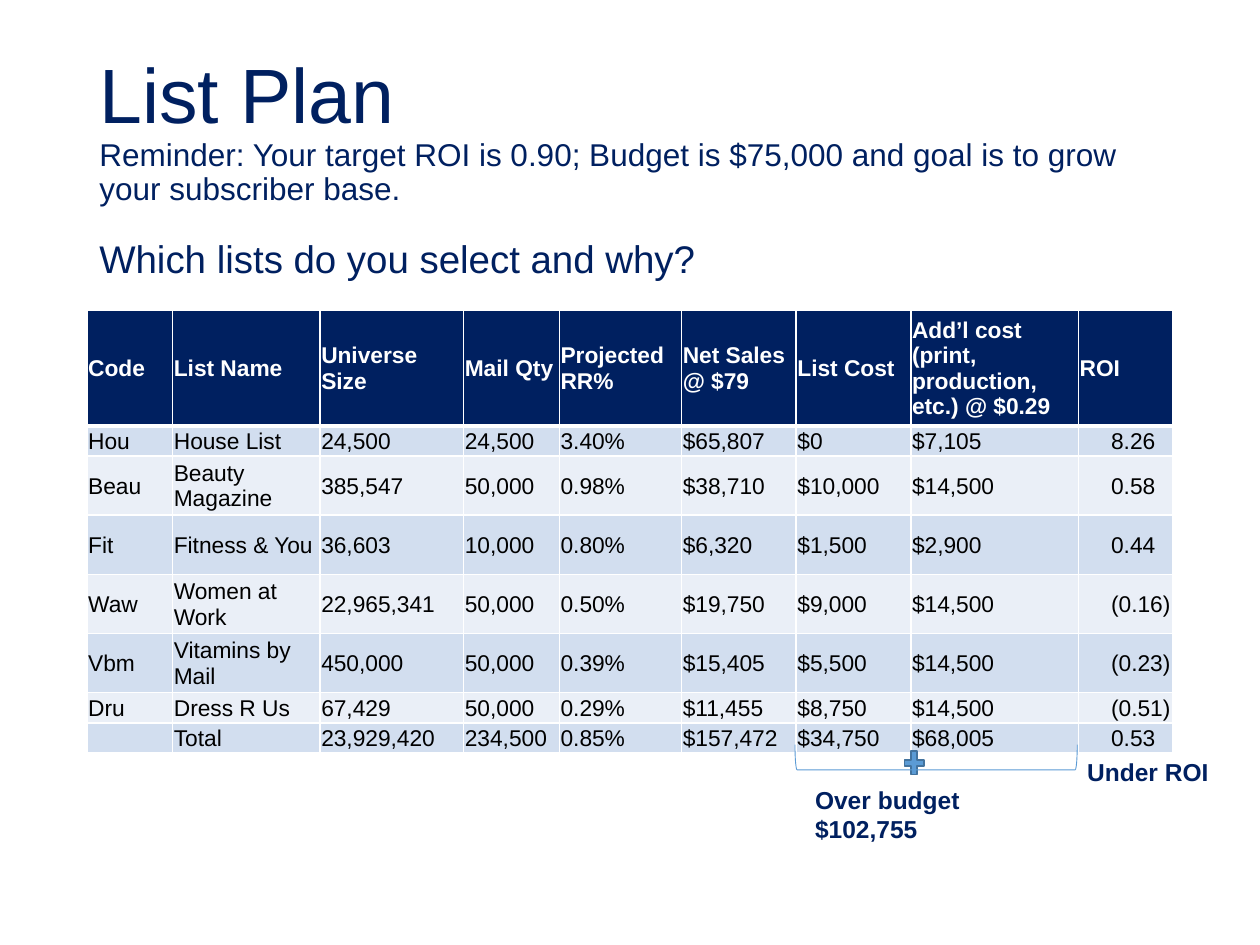
import pptx
import pptx.util
import pptx.dml.color
import pptx.enum.shapes
import pptx.enum.text
import pptx.oxml
import pptx.oxml.ns
from lxml import etree

Inches, Pt = pptx.util.Inches, pptx.util.Pt
SHAPES = pptx.enum.shapes.MSO_SHAPE

FONT = "Arial"
COLORS = {
    "navy": "002060", "white": "FFFFFF", "black": "000000",
    "band_dark": "D2DEEF", "band_light": "EAEFF7",
    "blue": "5B9BD5", "blue_edge": "43739E",
}

# text, size, space before (points)
HEADING = [
    ("List Plan", 44, 0),
    ("Reminder: Your target ROI is 0.90; Budget is $75,000 and goal is "
     "to grow your subscriber base.", 18, 0),
    ("Which lists do you select and why?", 22, 18.6),
]

# header, width
COLUMNS = [
    ("Code", 0.68), ("List Name", 1.17), ("Universe Size", 1.14),
    ("Mail Qty", 0.76), ("Projected RR%", 0.97), ("Net Sales @ $79", 0.91),
    ("List Cost", 0.91), ("Add’l cost (print, production, etc.) @ $0.29", 1.33),
    ("ROI", 0.75),
]
LISTS = [
    ("Hou", "House List", "24,500", "24,500", "3.40%", "$65,807", "$0", "$7,105", "8.26"),
    ("Beau", "Beauty Magazine", "385,547", "50,000", "0.98%", "$38,710", "$10,000", "$14,500", "0.58"),
    ("Fit", "Fitness & You", "36,603", "10,000", "0.80%", "$6,320", "$1,500", "$2,900", "0.44"),
    ("Waw", "Women at Work", "22,965,341", "50,000", "0.50%", "$19,750", "$9,000", "$14,500", "(0.16)"),
    ("Vbm", "Vitamins by Mail", "450,000", "50,000", "0.39%", "$15,405", "$5,500", "$14,500", "(0.23)"),
    ("Dru", "Dress R Us", "67,429", "50,000", "0.29%", "$11,455", "$8,750", "$14,500", "(0.51)"),
    ("", "Total", "23,929,420", "234,500", "0.85%", "$157,472", "$34,750", "$68,005", "0.53"),
]
ROW_HEIGHTS = [0.92, 0.24, 0.47, 0.47, 0.47, 0.47, 0.24, 0.24]
TABLE_SIZE = 13
ROI_INDENT = 0.25

NOTES = [
    (["Over budget", "$102,755"], (6.37, 6.18, 1.69, 0.57)),
    (["Under ROI"], (8.53, 5.96, 1.22, 0.34)),
]


def rgb(name):
    return pptx.dml.color.RGBColor.from_string(COLORS[name])


def set_font(para, size, color, bold=False):
    para.font.name = FONT
    para.font.size = Pt(size)
    para.font.bold = bold
    para.font.color.rgb = rgb(color)


def add_text(page, place, lines, bold=False, line_spacing=None):
    """Add a text box; each line is (text, size, space before)."""
    frame = page.shapes.add_textbox(*map(Inches, place)).text_frame
    frame.word_wrap = True
    for number, (text, size, before) in enumerate(lines):
        para = frame.add_paragraph() if number else frame.paragraphs[0]
        para.text = text
        para.space_before = Pt(before)
        if line_spacing:
            para.line_spacing = line_spacing
        set_font(para, size, "navy", bold)


def add_borders(cell, widths):
    """Draw white cell borders; widths maps L, R, T, B to points."""
    properties = cell._tc.get_or_add_tcPr()
    for index, (side, width) in enumerate(widths.items()):
        properties.insert(index, pptx.oxml.parse_xml(
            f'<a:ln{side} {pptx.oxml.ns.nsdecls("a")} w="{Pt(width)}"><a:solidFill>'
            f'<a:srgbClr val="{COLORS["white"]}"/></a:solidFill></a:ln{side}>'))


def add_list_table(page):
    rows = [[header for header, _ in COLUMNS]] + LISTS
    widths = [width for _, width in COLUMNS]
    table = page.shapes.add_table(
        len(rows), len(COLUMNS), Inches(0.69), Inches(2.46),
        Inches(sum(widths)), Inches(sum(ROW_HEIGHTS))).table
    for column, width in zip(table.columns, widths):
        column.width = Inches(width)
    for r, values in enumerate(rows):
        table.rows[r].height = Inches(ROW_HEIGHTS[r])
        header = r == 0
        fill = "navy" if header else "band_dark" if r % 2 else "band_light"
        for c, value in enumerate(values):
            cell = table.cell(r, c)
            indented = not header and c == len(COLUMNS) - 1
            cell.margin_left = Inches(0.01 + (ROI_INDENT if indented else 0))
            cell.margin_right = cell.margin_top = Inches(0.01)
            cell.margin_bottom = 0
            cell.vertical_anchor = pptx.enum.text.MSO_ANCHOR.MIDDLE
            cell.fill.solid()
            cell.fill.fore_color.rgb = rgb(fill)
            add_borders(cell, {"L": 1, "R": 1, "T": 3 if r == 1 else 1,
                               "B": 3 if header else 1})
            para = cell.text_frame.paragraphs[0]
            para.text = value
            set_font(para, TABLE_SIZE, "white" if header else "black", header)
            if not value:
                etree.SubElement(para._p, pptx.oxml.ns.qn("a:endParaRPr"),
                                 sz=str(TABLE_SIZE * 100))


def add_outlined(page, kind, place, line, width):
    shape = page.shapes.add_shape(kind, *map(Inches, place))
    shape.shadow.inherit = False
    shape.line.color.rgb = rgb(line)
    shape.line.width = Pt(width)
    return shape


def main():
    deck = pptx.Presentation()
    deck.slide_width, deck.slide_height = Inches(10), Inches(7.5)
    page = deck.slides.add_slide(deck.slide_layouts[6])

    add_text(page, (0.69, 0.4, 8.62, 1.16), HEADING, line_spacing=0.9)
    add_list_table(page)

    plus = add_outlined(page, SHAPES.MATH_PLUS, (7.15, 5.93, 0.21, 0.25), "blue_edge", 1)
    plus.fill.solid()
    plus.fill.fore_color.rgb = rgb("blue")
    bracket = add_outlined(page, SHAPES.LEFT_BRACKET, (7.33, 4.89, 0.2, 2.24), "blue", 0.5)
    bracket.fill.background()
    bracket.rotation = 270

    for lines, place in NOTES:
        add_text(page, place, [(line, 14, 0) for line in lines], bold=True)

    deck.save("out.pptx")


if __name__ == "__main__":
    main()
